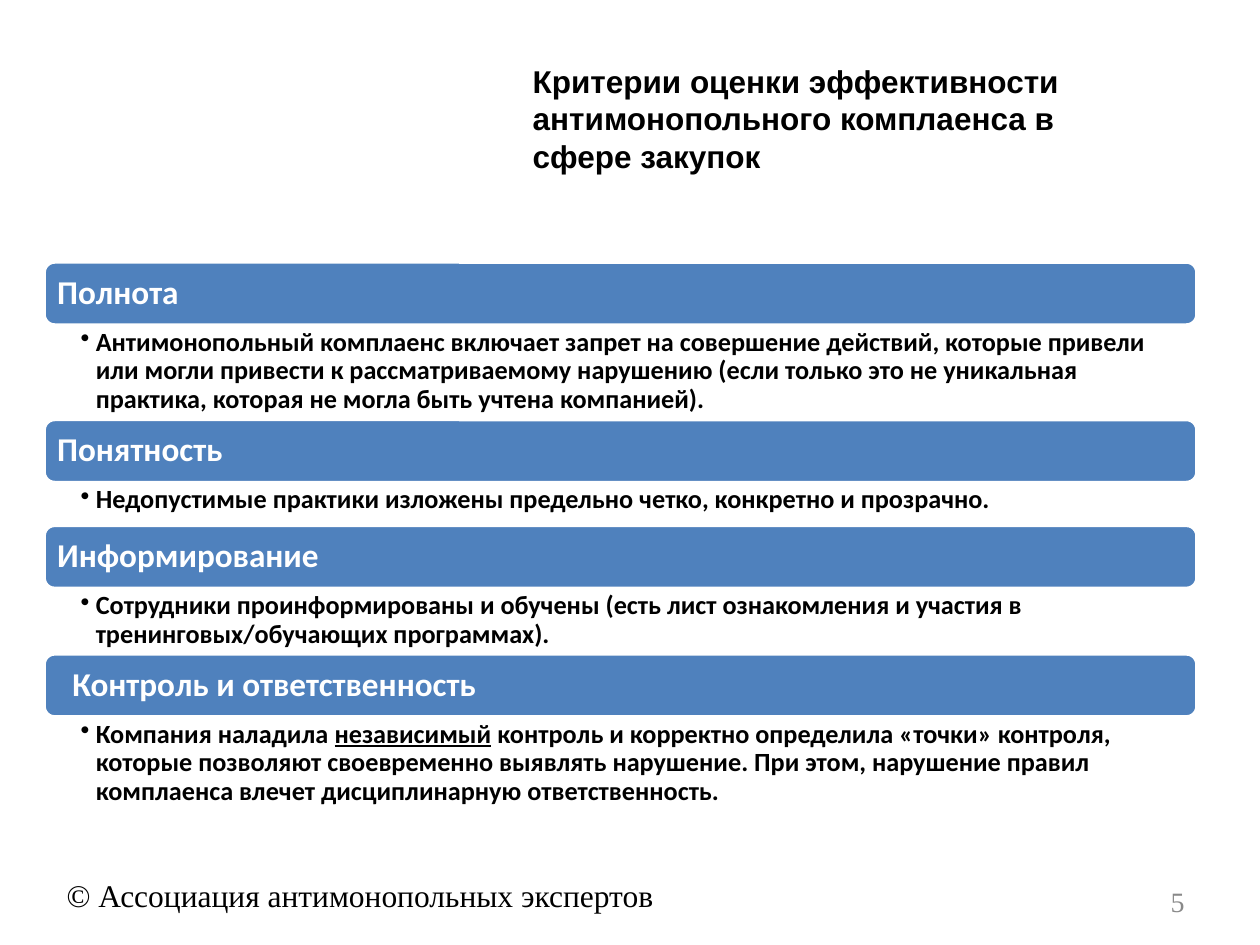
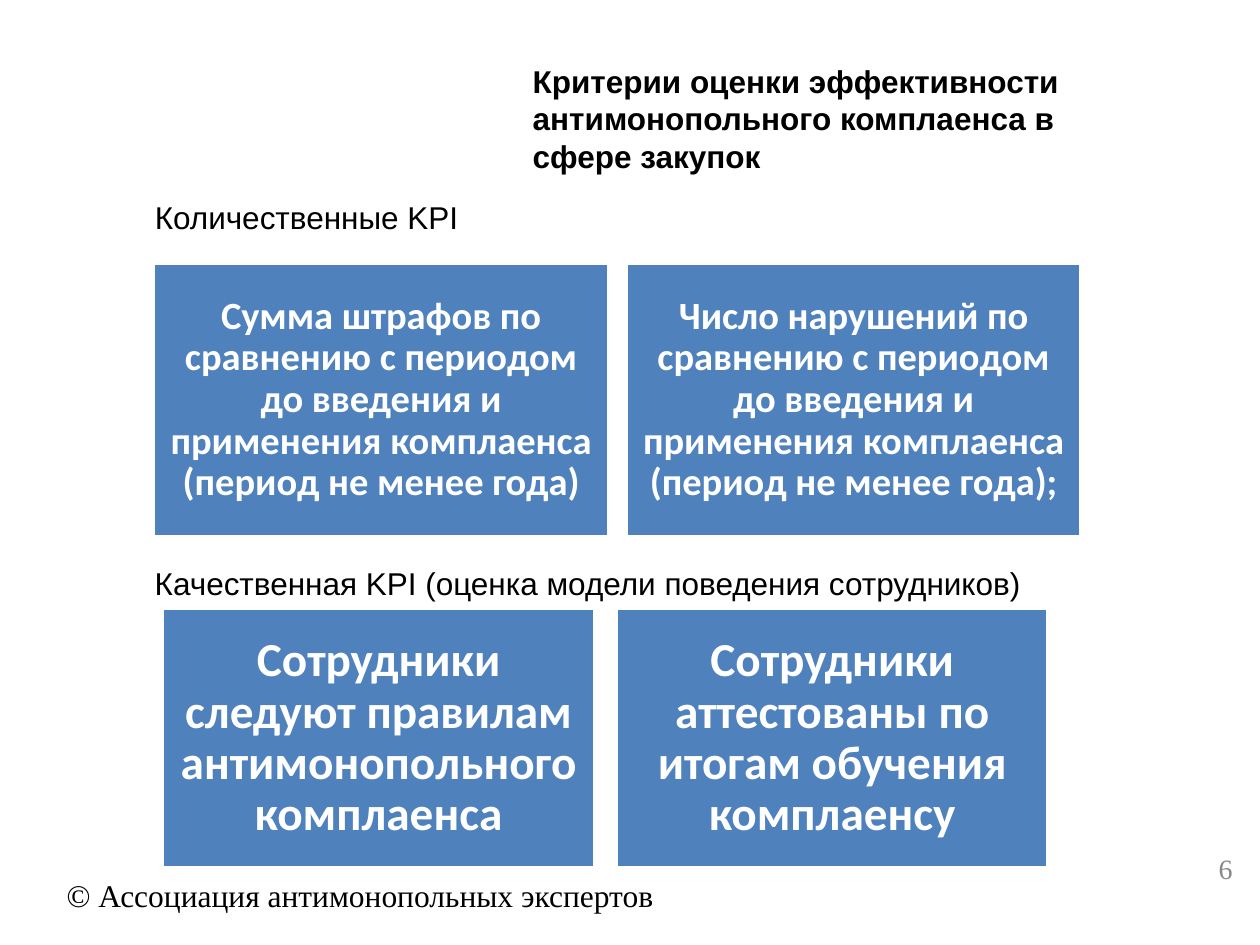
import pptx
import pptx.util
import pptx.dml.color
import pptx.enum.shapes
import pptx.enum.text
import lxml.etree
from pptx.oxml.ns import qn

Inches = pptx.util.Inches
Pt = pptx.util.Pt
Align = pptx.enum.text.PP_ALIGN
Anchor = pptx.enum.text.MSO_ANCHOR
Preset = pptx.enum.shapes.MSO_SHAPE

COLORS = {"accent": "4F81BD", "white": "FFFFFF", "text": "000000", "number": "898989"}
TITLE = "Критерии оценки эффективности антимонопольного комплаенса в сфере закупок"
FOOTER = "© Ассоциация антимонопольных экспертов"
DEFAULT_INSETS = (0.1, 0.05, 0.1, 0.05)
BAR_HEIGHT = 0.5

CRITERIA = [
    ("Полнота", 0, 0.75, [
        ("Антимонопольный комплаенс включает запрет на совершение действий, которые привели "
         "или могли привести к рассматриваемому нарушению (если только это не уникальная "
         "практика, которая не могла быть учтена компанией).", False)]),
    ("Понятность", 0, 0.34, [
        ("Недопустимые практики изложены предельно четко, конкретно и прозрачно.", False)]),
    ("Информирование", 0, 0.52, [
        ("Сотрудники проинформированы и обучены (есть лист ознакомления и участия в "
         "тренинговых/обучающих программах).", False)]),
    ("Контроль и ответственность", 0.12, 0.75, [
        ("Компания наладила ", False),
        ("независимый", True),
        (" контроль и корректно определила «точки» контроля, которые позволяют своевременно "
         "выявлять нарушение. При этом, нарушение правил комплаенса влечет дисциплинарную "
         "ответственность.", False)]),
]

QUANTITATIVE = [
    "Сумма штрафов по сравнению с периодом до введения и применения комплаенса "
    "(период не менее года)",
    "Число нарушений по сравнению с периодом до введения и применения комплаенса "
    "(период не менее года);",
]
QUALITATIVE = [
    "Сотрудники следуют правилам антимонопольного комплаенса",
    "Сотрудники аттестованы по итогам обучения комплаенсу",
]


def color(name):
    return pptx.dml.color.RGBColor.from_string(COLORS[name])


def set_frame(shape, insets, anchor):
    frame = shape.text_frame
    frame.word_wrap = True
    frame.vertical_anchor = anchor
    frame.margin_left, frame.margin_top, frame.margin_right, frame.margin_bottom = map(Inches, insets)
    return frame


def style_runs(para, font, size, tone, bold=False):
    for span in para.runs:
        span.font.name = font
        span.font.size = Pt(size)
        span.font.bold = bold
        span.font.color.rgb = color(tone)


def add_text(page, box, text, font, size, tone="text", bold=False, align=Align.LEFT, anchor=Anchor.TOP):
    shape = page.shapes.add_textbox(*map(Inches, box))
    para = set_frame(shape, DEFAULT_INSETS, anchor).paragraphs[0]
    para.text = text
    para.alignment = align
    style_runs(para, font, size, tone, bold)


def add_panel(page, preset, box, text, size, insets, align):
    shape = page.shapes.add_shape(preset, *map(Inches, box))
    shape.shadow.inherit = False
    shape.fill.solid()
    shape.fill.fore_color.rgb = color("accent")
    shape.line.color.rgb = color("white")
    shape.line.width = Pt(2)
    para = set_frame(shape, insets, Anchor.MIDDLE).paragraphs[0]
    para.text = text
    para.alignment = align
    para.line_spacing = 0.9
    style_runs(para, "Calibri", size, "white", True)


def add_bullet_text(page, box, parts):
    shape = page.shapes.add_textbox(*map(Inches, box))
    para = set_frame(shape, (0.29, 0.03, 0.15, 0.03), Anchor.TOP).paragraphs[0]
    properties = para._p.get_or_add_pPr()
    properties.set("marL", str(Inches(0.12)))
    properties.set("indent", str(-Inches(0.12)))
    lxml.etree.SubElement(properties, qn("a:buChar")).set("char", "•")
    para.line_spacing = 0.9
    for text, underlined in parts:
        span = para.add_run()
        span.text = text
        span.font.underline = underlined
    style_runs(para, "Calibri", 15, "text", True)


def add_page(deck, number, number_box):
    page = deck.slides.add_slide(deck.slide_layouts[6])
    add_text(page, (0.43, 6.9, 5.12, 0.4), FOOTER, "Times New Roman", 18)
    add_text(page, number_box, number, "Times New Roman", 16, "number",
             align=Align.RIGHT, anchor=Anchor.MIDDLE)
    add_text(page, (4.13, 0.44, 5, 1.01), TITLE, "Arial", 18, bold=True)
    return page


def add_criteria(page, left, top, width):
    for heading, indent, body_height, parts in CRITERIA:
        add_panel(page, Preset.ROUNDED_RECTANGLE, (left, top, width, BAR_HEIGHT), heading, 19,
                  (0.08 + indent, 0.08, 0.08, 0.08), Align.LEFT)
        add_bullet_text(page, (left, top + BAR_HEIGHT, width, body_height), parts)
        top += BAR_HEIGHT + body_height


def add_cards(page, box, gap, texts, size, inset):
    left, top, width, height = box
    card_width = (width - gap * (len(texts) - 1)) / len(texts)
    for index, text in enumerate(texts):
        card = (left + index * (card_width + gap), top, card_width, height)
        add_panel(page, Preset.RECTANGLE, card, text, size, (inset,) * 4, Align.CENTER)


def build_criteria_page(deck):
    page = add_page(deck, "5", (7.17, 6.95, 2.33, 0.4))
    add_criteria(page, 0.35, 2.08, 9.15)


def build_indicators_page(deck):
    page = add_page(deck, "6", (7.86, 6.69, 2.02, 0.4))
    add_text(page, (1.13, 1.52, 2.79, 0.4), "Количественные KPI", "Arial", 18)
    add_cards(page, (1.22, 2.09, 7.36, 2.17), 0.14, QUANTITATIVE, 22, 0.09)
    add_text(page, (1.13, 4.43, 8.16, 0.4),
             "Качественная KPI (оценка модели поведения сотрудников)", "Arial", 18)
    add_cards(page, (1.29, 4.83, 7.03, 2.06), 0.17, QUALITATIVE, 27, 0.11)


def main():
    deck = pptx.Presentation()
    deck.slide_width = Inches(10)
    deck.slide_height = Inches(7.5)
    build_criteria_page(deck)
    build_indicators_page(deck)
    deck.save("out.pptx")


if __name__ == "__main__":
    main()
